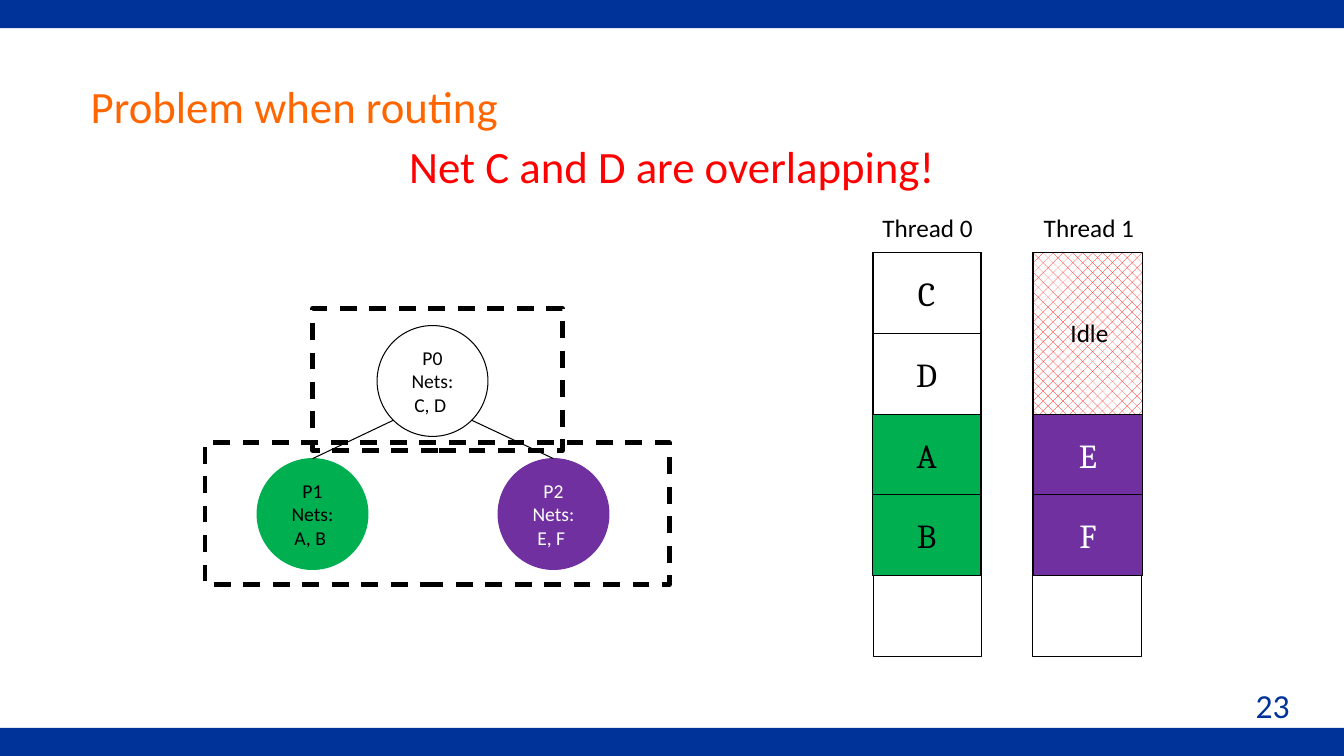
from dataclasses import dataclass
from typing import Optional

from lxml import etree
from pptx import Presentation
from pptx import util as u
from pptx.dml.color import RGBColor
from pptx.enum import dml, shapes, text
from pptx.oxml import ns
from pptx.shapes.autoshape import Shape
from pptx.slide import Slide
from pptx.text.text import TextFrame

BLACK = RGBColor(0x00, 0x00, 0x00)
WHITE = RGBColor(0xFF, 0xFF, 0xFF)
BLUE = RGBColor(0x00, 0x33, 0x99)
ORANGE = RGBColor(0xFF, 0x66, 0x00)
RED = RGBColor(0xFF, 0x00, 0x00)
GREEN = RGBColor(0x00, 0xB0, 0x50)
PURPLE = RGBColor(0x70, 0x30, 0xA0)

SLIDE_WIDTH, SLIDE_HEIGHT, BAR_HEIGHT = 13.33, 7.5, 0.28
NODE_SIZE = 1.1
CELL_WIDTH, CELL_HEIGHT, STACK_TOP, STACK_SLOTS = 1.08, 0.8, 2.51, 5


@dataclass
class Box:
    left: float
    top: float
    width: float
    height: float

    def lengths(self) -> list[u.Length]:
        return [u.Inches(v) for v in (self.left, self.top, self.width, self.height)]


@dataclass
class Node:
    name: str
    nets: str
    left: float
    top: float
    fill: Optional[RGBColor] = None
    line: RGBColor = BLACK
    color: RGBColor = BLACK


@dataclass
class Cell:
    net: str
    column: float
    slot: int
    fill: Optional[RGBColor] = None
    color: RGBColor = BLACK


@dataclass
class Thread:
    label: str
    label_left: float
    frame_left: float


NODES = [
    Node("P0", "C, D", 3.74, 3.23),
    Node("P1", "A, B", 2.55, 4.55, GREEN, GREEN),
    Node("P2", "E, F", 4.94, 4.55, PURPLE, PURPLE, WHITE),
]
THREADS = [Thread("Thread 0", 8.45, 8.66), Thread("Thread 1", 10.05, 10.24)]
CELLS = [
    Cell("C", 8.65, 0),
    Cell("D", 8.65, 1),
    Cell("A", 8.65, 2, GREEN),
    Cell("B", 8.65, 3, GREEN),
    Cell("E", 10.25, 2, PURPLE, WHITE),
    Cell("F", 10.25, 3, PURPLE, WHITE),
]


def write(frame: TextFrame, *lines: str, size: float, color: RGBColor,
          font: str = "Calibri", align: text.PP_ALIGN = text.PP_ALIGN.CENTER,
          anchor: text.MSO_ANCHOR = text.MSO_ANCHOR.TOP) -> None:
    frame.word_wrap = True
    frame.vertical_anchor = anchor
    for index, line in enumerate(lines):
        paragraph = frame.add_paragraph() if index else frame.paragraphs[0]
        paragraph.alignment = align
        run = paragraph.add_run()
        run.text = line
        run.font.name = font
        run.font.size = u.Pt(size)
        run.font.color.rgb = color


def add_label(slide: Slide, box: Box, content: str, size: float, color: RGBColor,
              align: text.PP_ALIGN = text.PP_ALIGN.CENTER) -> None:
    frame = slide.shapes.add_textbox(*box.lengths()).text_frame
    write(frame, content, size=size, color=color, align=align)


def add_block(slide: Slide, box: Box, fill: Optional[RGBColor] = None,
              line: Optional[RGBColor] = BLACK, weight: float = 0.75,
              kind: shapes.MSO_SHAPE = shapes.MSO_SHAPE.RECTANGLE) -> Shape:
    shape = slide.shapes.add_shape(kind, *box.lengths())
    shape.shadow.inherit = False
    if fill is None:
        shape.fill.background()
    else:
        shape.fill.solid()
        shape.fill.fore_color.rgb = fill
    if line is None:
        shape.line.fill.background()
    else:
        shape.line.color.rgb = line
        shape.line.width = u.Pt(weight)
    return shape


def add_node(slide: Slide, node: Node) -> Shape:
    box = Box(node.left, node.top, NODE_SIZE, NODE_SIZE)
    shape = add_block(slide, box, node.fill, node.line, kind=shapes.MSO_SHAPE.OVAL)
    write(shape.text_frame, node.name, f"Nets: {node.nets} ", size=14,
          color=node.color, anchor=text.MSO_ANCHOR.MIDDLE)
    return shape


def add_edge(slide: Slide, left: float, top: float, child: Shape) -> None:
    start = u.Inches(left), u.Inches(top)
    edge = slide.shapes.add_connector(shapes.MSO_CONNECTOR.STRAIGHT, *start, *start)
    edge.end_connect(child, 0)
    edge.line.color.rgb = BLACK
    edge.line.width = u.Pt(0.75)
    etree.SubElement(edge.element.spPr, ns.qn("a:effectLst"))


def add_cell(slide: Slide, cell: Cell) -> None:
    top = STACK_TOP + cell.slot * CELL_HEIGHT
    shape = add_block(slide, Box(cell.column, top, CELL_WIDTH, CELL_HEIGHT), cell.fill)
    write(shape.text_frame, cell.net, size=24, color=cell.color, font="Cambria",
          anchor=text.MSO_ANCHOR.MIDDLE)


def add_dashed_frame(slide: Slide, box: Box) -> None:
    frame = add_block(slide, box, weight=3)
    frame.line.dash_style = dml.MSO_LINE.DASH


def main() -> None:
    presentation = Presentation()
    presentation.slide_width = u.Inches(SLIDE_WIDTH)
    presentation.slide_height = u.Inches(SLIDE_HEIGHT)
    slide = presentation.slides.add_slide(presentation.slide_layouts[5])

    # Bars, title and page number
    for top in (SLIDE_HEIGHT - BAR_HEIGHT, 0):
        add_block(slide, Box(0, top, SLIDE_WIDTH, BAR_HEIGHT), BLUE, None)
    title = slide.shapes.title
    title.left, title.top, title.width, title.height = Box(0.8, 0.42, 9.51, 1.25).lengths()
    write(title.text_frame, "Problem when routing", size=32, color=ORANGE,
          align=text.PP_ALIGN.LEFT, anchor=text.MSO_ANCHOR.MIDDLE)
    add_label(slide, Box(10.11, 6.75, 2.78, 0.5), "23", 24, BLUE, text.PP_ALIGN.RIGHT)

    # Partition tree
    _, left_child, right_child = [add_node(slide, node) for node in NODES]
    add_edge(slide, 3.9, 4.17, left_child)
    add_edge(slide, 4.68, 4.17, right_child)

    # Thread schedules
    for thread in THREADS:
        add_block(slide, Box(thread.frame_left, STACK_TOP, CELL_WIDTH,
                             STACK_SLOTS * CELL_HEIGHT))
        add_label(slide, Box(thread.label_left, 2.06, 1.5, 0.4), thread.label, 18, BLACK)
    idle = add_block(slide, Box(10.25, STACK_TOP, CELL_WIDTH, 2 * CELL_HEIGHT))
    idle.fill.patterned()
    idle.fill.pattern = dml.MSO_PATTERN.PERCENT_30
    idle.fill.fore_color.rgb = RED
    idle.fill.back_color.rgb = WHITE
    for cell in CELLS:
        add_cell(slide, cell)
    add_label(slide, Box(9.77, 3.1, 2.07, 0.4), "Idle", 18, BLACK)

    # Tree level outlines and warning
    add_dashed_frame(slide, Box(3.1, 3.06, 2.48, 1.41))
    add_dashed_frame(slide, Box(2.03, 4.39, 4.61, 1.41))
    add_label(slide, Box(3.69, 1.33, 5.95, 0.64), "Net C and D are overlapping!", 32, RED)

    presentation.save("out.pptx")


if __name__ == "__main__":
    main()
